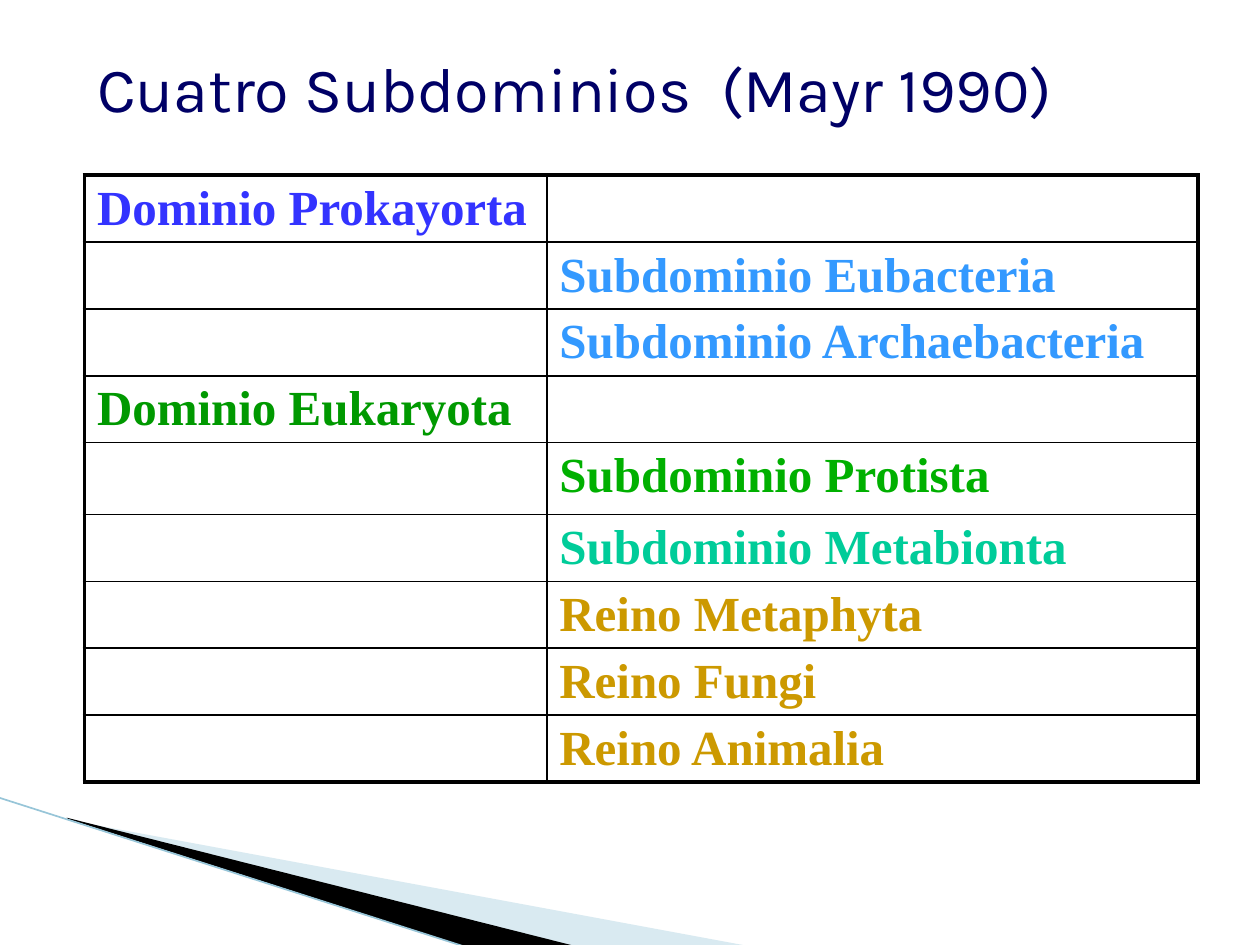
import dataclasses

import lxml.etree
import pptx
import pptx.dml.color
import pptx.enum.shapes
import pptx.enum.text
import pptx.oxml
import pptx.oxml.ns
import pptx.util

UNIT = pptx.util.Inches(0.1)  # the page is a grid of 100 columns by 75 rows
COLUMNS, ROWS = 100, 75


@dataclasses.dataclass(frozen=True)
class Theme:
    title_font: str = "Karla"
    table_font: str = "Times New Roman"
    title_size: float = 36
    table_size: float = 28
    outer_line: float = 2.25
    inner_line: float = 1
    wave_line: float = 0.95
    black: str = "000000"
    title: str = "000066"
    pale_wave: str = "A0CBDC"
    wave_edge: str = "97C5D8"
    prokaryota: str = "3333FF"
    bacteria: str = "3399FF"
    eukaryota: str = "009900"
    protista: str = "00B000"
    metabionta: str = "00CC99"
    kingdom: str = "CC9900"


@dataclasses.dataclass(frozen=True)
class Box:
    left: float
    top: float
    width: float
    height: float

    def lengths(self):
        return [grid(n) for n in dataclasses.astuple(self)]

    def point(self, x, y):
        return grid(self.left + x), grid(self.top + y)


THEME = Theme()

# Column of the table, wording and colour, one entry for each row
TAXA = [
    (0, "Dominio Prokayorta", THEME.prokaryota),
    (1, "Subdominio Eubacteria", THEME.bacteria),
    (1, "Subdominio Archaebacteria", THEME.bacteria),
    (0, "Dominio Eukaryota", THEME.eukaryota),
    (1, "Subdominio Protista", THEME.protista),
    (1, "Subdominio Metabionta", THEME.metabionta),
    (1, "Reino Metaphyta", THEME.kingdom),
    (1, "Reino Fungi", THEME.kingdom),
    (1, "Reino Animalia", THEME.kingdom),
]
TABLE_COLUMNS = [36.7, 51.7]
TABLE_ROWS = [4.4] + [4.9] * 3 + [5.7] + [4.9] * 4


def grid(count):
    return round(count * UNIT)


def rgb(code):
    return pptx.dml.color.RGBColor.from_string(code)


def style_font(font, name, size, color, bold=False):
    font.name, font.size, font.bold = name, pptx.util.Pt(size), bold
    font.color.rgb = rgb(color)


def add_title(page, box, text):
    title = page.shapes.title
    title.left, title.top, title.width, title.height = box.lengths()
    frame = title.text_frame
    frame.text = text
    frame.word_wrap = True
    frame.auto_size = pptx.enum.text.MSO_AUTO_SIZE.NONE
    frame.vertical_anchor = pptx.enum.text.MSO_ANCHOR.MIDDLE
    para = frame.paragraphs[0]
    para.alignment = pptx.enum.text.PP_ALIGN.LEFT
    style_font(para.font, THEME.title_font, THEME.title_size, THEME.title)


def add_wedge(page, box, points, color, opacity=100):
    corners = [box.point(x, y) for x, y in points]
    builder = page.shapes.build_freeform(*corners[0])
    builder.add_line_segments(corners[1:], close=True)
    wedge = builder.convert_to_shape()
    wedge.shadow.inherit = False
    wedge.line.fill.background()
    wedge.fill.solid()
    wedge.fill.fore_color.rgb = rgb(color)
    if opacity < 100:
        swatch = wedge.fill._xPr.find(".//" + pptx.oxml.ns.qn("a:srgbClr"))
        alpha = lxml.etree.SubElement(swatch, pptx.oxml.ns.qn("a:alpha"))
        alpha.set("val", str(opacity * 1000))


def add_wave(page, box):
    """Draw the two wedges and the edge line at the foot of the page."""
    add_wedge(page, box, [(5.5, 1.8), (59.5, 11.8), (45.6, 11.8), (5.5, 1.7)],
              THEME.pale_wave, opacity=40)
    add_wedge(page, box, [(5.3, 1.6), (45.7, 11.8), (37.2, 11.9), (5.4, 1.7)],
              THEME.black)
    edge = page.shapes.add_connector(
        pptx.enum.shapes.MSO_CONNECTOR.STRAIGHT,
        *box.point(-0.1, 0), *box.point(37.1, 11.9))
    edge.line.color.rgb = rgb(THEME.wave_edge)
    edge.line.width = pptx.util.Pt(THEME.wave_line)
    lxml.etree.SubElement(edge._element.spPr, pptx.oxml.ns.qn("a:effectLst"))


def set_borders(cell, widths):
    """Rule the left, right, top and bottom sides, in that order."""
    properties = cell._tc.get_or_add_tcPr()
    for side, width in zip("LRTB", widths):
        properties.append(pptx.oxml.parse_xml(
            f'<a:ln{side} {pptx.oxml.ns.nsdecls("a")} w="{pptx.util.Pt(width)}">'
            f'<a:solidFill><a:srgbClr val="{THEME.black}"/></a:solidFill>'
            f'</a:ln{side}>'))


def add_taxa_table(page, box):
    table = page.shapes.add_table(
        len(TABLE_ROWS), len(TABLE_COLUMNS), *box.lengths()).table
    table.first_row = table.horz_banding = False
    for column, width in zip(table.columns, TABLE_COLUMNS):
        column.width = grid(width)
    for row, height in zip(table.rows, TABLE_ROWS):
        row.height = grid(height)

    last_row, last_column = len(TABLE_ROWS) - 1, len(TABLE_COLUMNS) - 1
    for r, (taxon_column, name, color) in enumerate(TAXA):
        for c in range(len(TABLE_COLUMNS)):
            cell = table.cell(r, c)
            outer_sides = (c == 0, c == last_column, r == 0, r == last_row)
            set_borders(cell, [THEME.outer_line if outer else THEME.inner_line
                               for outer in outer_sides])
            cell.fill.background()
            if c == taxon_column:
                cell.text = name
            style_font(cell.text_frame.paragraphs[0].font, THEME.table_font,
                       THEME.table_size, color, bold=True)


def main():
    deck = pptx.Presentation()
    deck.slide_width, deck.slide_height = grid(COLUMNS), grid(ROWS)
    page = deck.slides.add_slide(deck.slide_layouts.get_by_name("Title Only"))
    add_wave(page, Box(0, 63.3, 59.5, 11.9))
    add_title(page, Box(6.7, 3.3, 81.2, 7.3), "Cuatro Subdominios  (Mayr 1990)")
    add_taxa_table(page, Box(6.7, 13.9, sum(TABLE_COLUMNS), sum(TABLE_ROWS)))
    deck.save("out.pptx")


if __name__ == "__main__":
    main()
